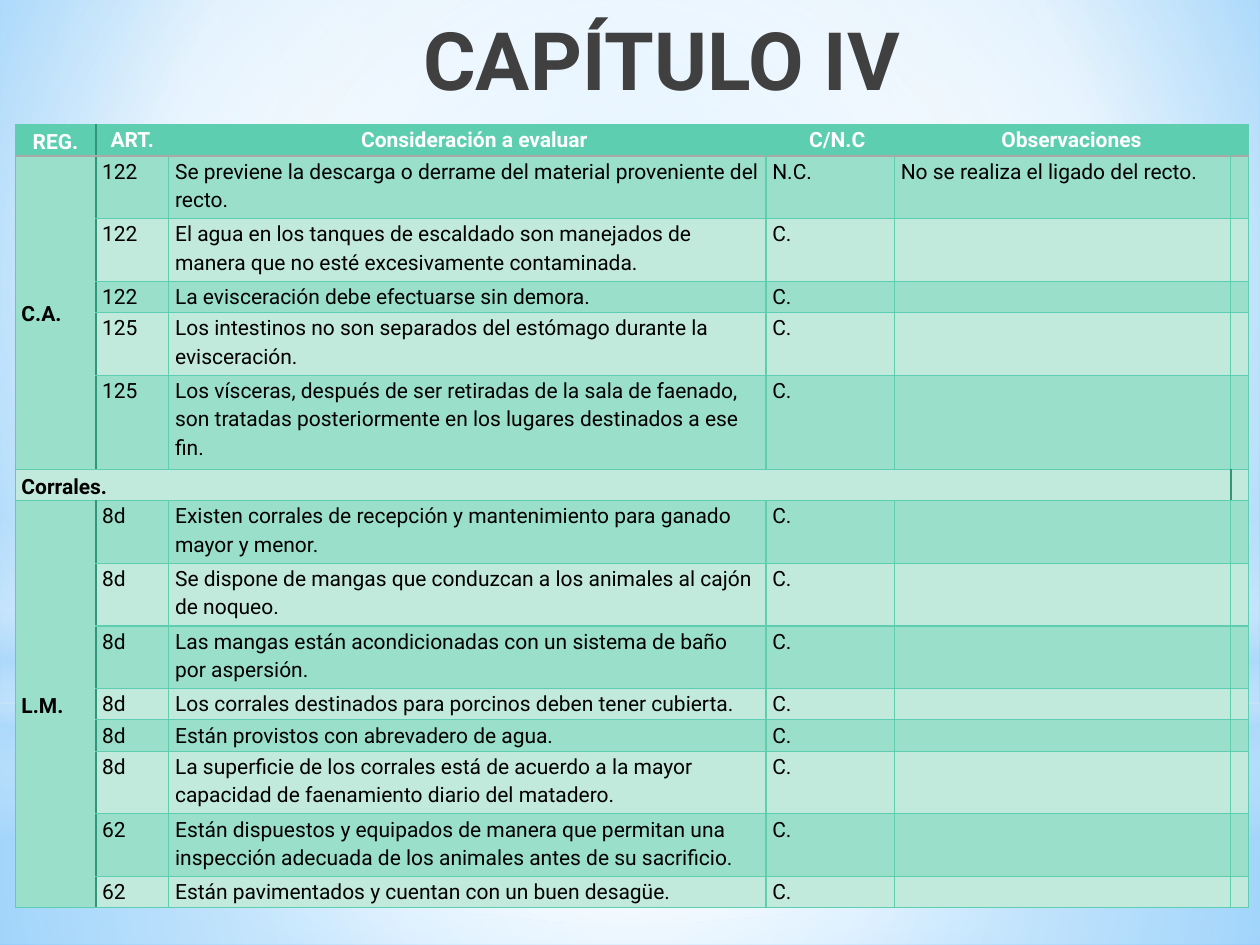
from lxml.etree import SubElement
from pptx import Presentation
from pptx.dml.color import RGBColor
from pptx.enum.shapes import MSO_SHAPE
from pptx.enum.text import MSO_ANCHOR, PP_ALIGN
from pptx.oxml.ns import qn
from pptx.util import Inches, Pt

SLIDE_W, SLIDE_H = 10, 7.5
FONT = "Roboto"

WHITE = RGBColor(0xFF, 0xFF, 0xFF)
BLACK = RGBColor(0x00, 0x00, 0x00)
TITLE_GREY = RGBColor(0x40, 0x40, 0x40)
GREEN = RGBColor(0x5D, 0xCE, 0xAF)
BAND_DARK = RGBColor(0x99, 0xDF, 0xCA)
BAND_LIGHT = RGBColor(0xC1, 0xEA, 0xDC)
LINE_DARK = RGBColor(0x31, 0x95, 0x7A)
LINE_GREY = RGBColor(0xA9, 0xA9, 0xA9)
SKY = RGBColor(0x9E, 0xD5, 0xFF)
BLUE = RGBColor(0x5B, 0xB9, 0xFF)
PALE = RGBColor(0xB4, 0xDC, 0xFA)

# Table grid: column widths and row heights in units of one text line
COLS = [0.64, 0.58, 4.74, 0.11, 0.91, 2.67, 0.11]
LINE_H = 6.22 / 25
ROW_LINES = [1, 2, 2, 1, 2, 3, 1, 2, 2, 2, 1, 1, 2, 2, 1]
HEADER = {0: "REG.", 1: "ART.", 2: "Consideración a evaluar", 4: "C/N.C",
          5: "Observaciones"}
CARCASS = [
    ("122", "Se previene la descarga o derrame del material proveniente del recto.",
     "N.C.", "No se realiza el ligado del recto."),
    ("122", "El agua en los tanques de escaldado son manejados de manera que "
     "no esté excesivamente contaminada.", "C.", ""),
    ("122", "La evisceración debe efectuarse sin demora.", "C.", ""),
    ("125", "Los intestinos no son separados del estómago durante la evisceración.",
     "C.", ""),
    ("125", "Los vísceras, después de ser retiradas de la sala de faenado, son "
     "tratadas posteriormente en los lugares destinados a ese fin.", "C.", ""),
]
PENS = [
    ("8d", "Existen corrales de recepción y mantenimiento para ganado mayor y menor.",
     "C.", ""),
    ("8d", "Se dispone de mangas que conduzcan a los animales al cajón de noqueo.",
     "C.", ""),
    ("8d", "Las mangas están acondicionadas con un sistema de baño por aspersión.",
     "C.", ""),
    ("8d", "Los corrales destinados para porcinos deben tener cubierta.", "C.", ""),
    ("8d", "Están provistos con abrevadero de agua.", "C.", ""),
    ("8d", "La superficie de los corrales está de acuerdo a la mayor capacidad de "
     "faenamiento diario del matadero.", "C.", ""),
    ("62", "Están dispuestos y equipados de manera que permitan una inspección "
     "adecuada de los animales antes de su sacrificio.", "C.", ""),
    ("62", "Están pavimentados y cuentan con un buen desagüe.", "C.", ""),
]
SECTION_ROW = len(CARCASS) + 1
LAST_COL = len(COLS) - 1


def set_gradient(fill, parent, stops, focus=None):
    """Give a gradient: radial around focus (l, t, r, b), else top to bottom."""
    fill.solid()
    grad = parent.makeelement(qn("a:gradFill"), {"rotWithShape": "1"})
    gs_list = SubElement(grad, qn("a:gsLst"))
    for pos, color, opacity in stops:
        gs = SubElement(gs_list, qn("a:gs"), pos=str(pos * 1000))
        clr = SubElement(gs, qn("a:srgbClr"), val=str(color))
        if opacity < 100:
            SubElement(clr, qn("a:alpha"), val=str(opacity * 1000))
    if focus:
        path = SubElement(grad, qn("a:path"), path="circle")
        SubElement(path, qn("a:fillToRect"),
                   {side: str(v * 1000) for side, v in zip("ltrb", focus)})
    else:
        SubElement(grad, qn("a:lin"), ang="5400000", scaled="0")
    parent.replace(parent.find(qn("a:solidFill")), grad)


def add_glow(s, kind, top, height, stops, focus=None):
    """Full-width translucent shape; top and height are shares of the slide."""
    sp = s.shapes.add_shape(kind, 0, Inches(top * SLIDE_H), Inches(SLIDE_W),
                            Inches(height * SLIDE_H))
    sp.shadow.inherit = False
    sp.line.fill.background()
    set_gradient(sp.fill, sp._element.spPr, stops, focus)


def style_runs(p, size, color, bold):
    for r in p.runs:
        r.font.name, r.font.size, r.font.bold = FONT, Pt(size), bold
        r.font.color.rgb = color


def add_title(s, text):
    box = s.shapes.add_textbox(Inches(1.69), Inches(-0.02), Inches(7.12), Inches(1.25))
    tf = box.text_frame
    tf.word_wrap = True
    tf.margin_top = Inches(0.1)
    tf.text = text
    p = tf.paragraphs[0]
    p.alignment = PP_ALIGN.CENTER
    style_runs(p, 46, TITLE_GREY, True)


def edge_style(row, horizontal=None, vertical=None):
    """Colour and width of the grid line with the given index."""
    if horizontal == 1:
        return LINE_GREY, 1.25
    if vertical == (LAST_COL if row == SECTION_ROW else 1):
        return LINE_DARK, 1.25
    return GREEN, 0.75


def set_borders(cell, row, col):
    edges = {"a:lnL": edge_style(row, vertical=col),
             "a:lnR": edge_style(row, vertical=col + cell.span_width),
             "a:lnT": edge_style(row, horizontal=row),
             "a:lnB": edge_style(row, horizontal=row + cell.span_height)}
    tc_pr = cell._tc.get_or_add_tcPr()
    for i, (tag, (color, width)) in enumerate(edges.items()):
        ln = tc_pr.makeelement(qn(tag), {"w": str(Pt(width))})
        fill = SubElement(ln, qn("a:solidFill"))
        SubElement(fill, qn("a:srgbClr"), val=str(color))
        tc_pr.insert(i, ln)


def format_cell(cell, row, col):
    header = row == 0
    cell.margin_left = cell.margin_right = Inches(0.05)
    cell.margin_top = cell.margin_bottom = 0
    cell.fill.solid()
    cell.fill.fore_color.rgb = GREEN if header else BAND_DARK if row % 2 else BAND_LIGHT
    if col == 0:
        cell.vertical_anchor = MSO_ANCHOR.MIDDLE
    p = cell.text_frame.paragraphs[0]
    p.line_spacing = 1.15
    p.alignment = PP_ALIGN.CENTER if header else PP_ALIGN.LEFT
    style_runs(p, 12, WHITE if header else BLACK, header or col == 0)
    if not p.runs:
        SubElement(p._p, qn("a:endParaRPr"), sz="1200")
    set_borders(cell, row, col)


def fill_section(tbl, label, first, rows):
    """Write one group of articles under a label merged down column 0."""
    tbl.cell(first, 0).merge(tbl.cell(first + len(rows) - 1, 0))
    tbl.cell(first, 0).text = label
    for i, texts in enumerate(rows, first):
        tbl.cell(i, 3).merge(tbl.cell(i, 4))
        for j, text in zip((1, 2, 3, 5), texts):
            tbl.cell(i, j).text = text


def add_checklist(s):
    tbl = s.shapes.add_table(len(ROW_LINES), len(COLS), Inches(0.12), Inches(0.99),
                             Inches(sum(COLS)), Inches(6.22)).table
    tbl.first_row = tbl.horz_banding = False
    for column, width in zip(tbl.columns, COLS):
        column.width = Inches(width)
    for row, lines in zip(tbl.rows, ROW_LINES):
        row.height = Inches(lines * LINE_H)

    # Header, two groups and the section line between them
    for j, text in HEADER.items():
        tbl.cell(0, j).text = text
    tbl.cell(0, 2).merge(tbl.cell(0, 3))
    tbl.cell(0, 5).merge(tbl.cell(0, 6))
    fill_section(tbl, "C.A.", 1, CARCASS)
    tbl.cell(SECTION_ROW, 0).merge(tbl.cell(SECTION_ROW, LAST_COL - 1))
    tbl.cell(SECTION_ROW, 0).text = "Corrales."
    fill_section(tbl, "L.M.", SECTION_ROW + 1, PENS)

    for i in range(len(ROW_LINES)):
        for j in range(len(COLS)):
            format_cell(tbl.cell(i, j), i, j)


def add_backdrop(s):
    center = (50, 50, 50, 50)
    fill = s.background.fill
    fill.solid()
    set_gradient(fill, next(s._element.iter(qn("p:bgPr"))),
                 [(0, SKY, 100), (60, WHITE, 100), (100, BLUE, 100)], (20, 10, 20, 60))
    add_glow(s, MSO_SHAPE.RECTANGLE, 0.744, 0.256,
             [(0, WHITE, 91), (37, WHITE, 76), (100, PALE, 79)], center)
    add_glow(s, MSO_SHAPE.RECTANGLE, 0, 0.744,
             [(0, WHITE, 89), (48, WHITE, 62), (100, PALE, 79)], center)
    add_glow(s, MSO_SHAPE.RECTANGLE, 0.55, 0.333,
             [(0, WHITE, 0), (29, WHITE, 30), (45, PALE, 40), (55, WHITE, 26),
              (65, PALE, 60), (100, WHITE, 0)])
    add_glow(s, MSO_SHAPE.OVAL, 0.233, 0.744, [(0, WHITE, 100), (56, WHITE, 0)], center)


def main():
    prs = Presentation()
    prs.slide_width, prs.slide_height = Inches(SLIDE_W), Inches(SLIDE_H)
    s = prs.slides.add_slide(prs.slide_layouts[6])
    add_backdrop(s)
    add_title(s, "CAPÍTULO IV")
    add_checklist(s)
    prs.save("out.pptx")


if __name__ == "__main__":
    main()
